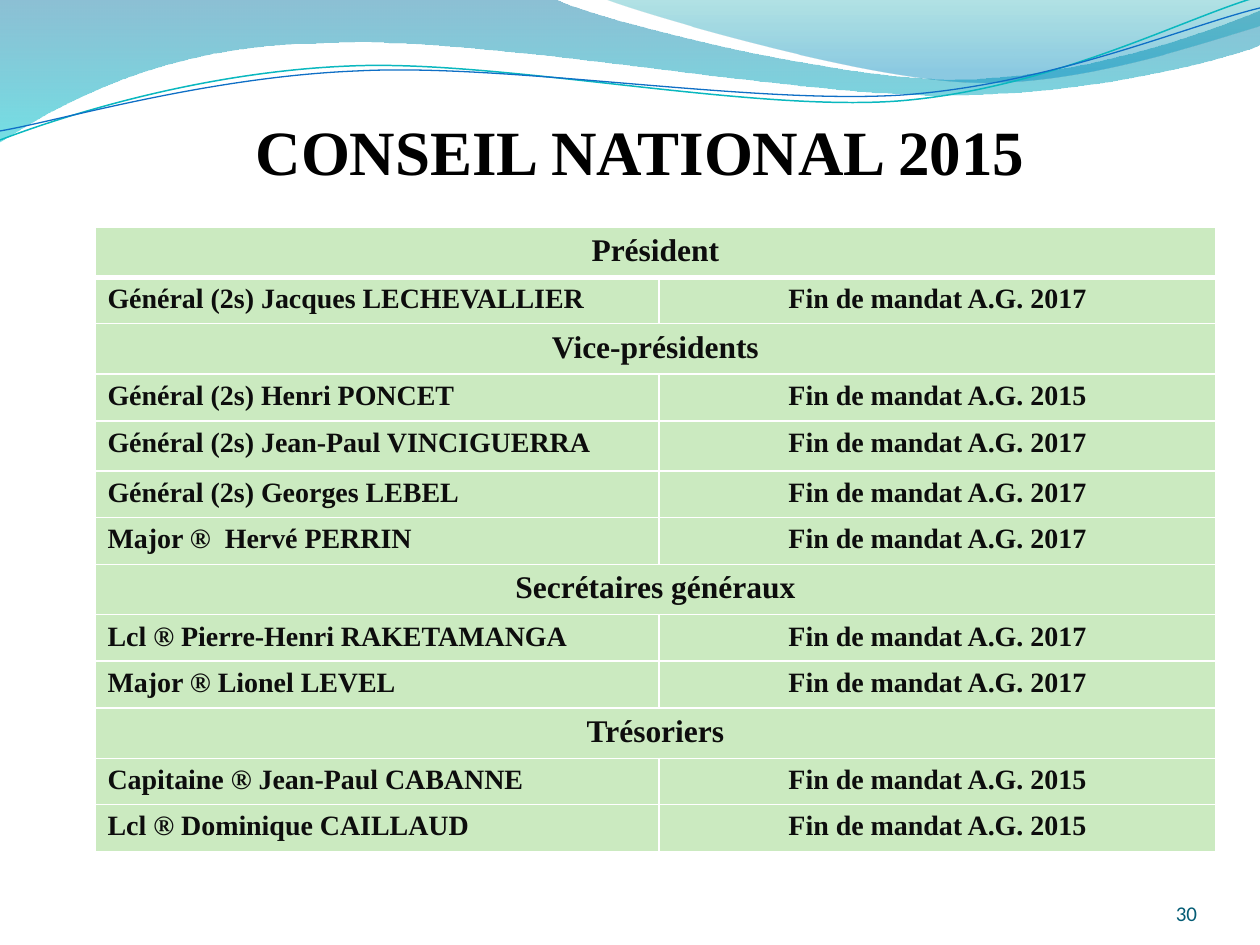
from itertools import chain
from lxml import etree
from pptx import Presentation
from pptx.dml.color import RGBColor
from pptx.enum.text import MSO_ANCHOR, MSO_AUTO_SIZE, PP_ALIGN
from pptx.oxml import parse_xml
from pptx.oxml.ns import nsdecls, qn
from pptx.util import Pt

W, H = 1260, 945
COLORS = {
    "blue_top": "0074A1", "cyan_bottom": "00C6CF",
    "teal_top": "00A1A9", "blue_bottom": "008BBF",
    "teal_line": "0AB8BF", "blue_line": "0F6FC6",
    "title": "000000", "page": "045C75",
    "cell": "CBEAC0", "cell_text": "0D0D0D", "border": "FFFFFF",
}
SERIF = "Times New Roman"

# Waves: a start point, then (x, y) for a line or three points for a curve
LEFT_WAVE = [
    (0, -1), (554, -1), (600, 21, 837, 79, 955, 79),
    (1074, 79, 1207, 33, 1260, 11), (1261, 45), (1239, 55, 1096, 96, 940, 95),
    (784, 95, 481, 35, 324, 43), (163, 44, 58, 105, -1, 142),
]
RIGHT_WAVE = [
    (604, -1), (641, 14, 859, 78, 969, 82),
    (1079, 87, 1211, 40, 1260, 26), (1260, 0),
]
TEAL_CURVE = [
    (0, 140), (60, 117, 199, 72, 349, 66),
    (498, 59, 747, 112, 898, 101), (1050, 89, 1182, 19, 1257, -3),
]
BLUE_CURVE = [
    (0, 131), (59, 121, 207, 77, 357, 71),
    (508, 63, 752, 105, 903, 95), (1053, 84, 1186, 26, 1260, 8),
]

# Council: heading, then (name, year the term ends)
COUNCIL = [
    ("Président", [("Général (2s) Jacques LECHEVALLIER", 2017)]),
    ("Vice-présidents", [
        ("Général (2s) Henri PONCET", 2015),
        ("Général (2s) Jean-Paul VINCIGUERRA", 2017),
        ("Général (2s) Georges LEBEL", 2017),
        ("Major ®  Hervé PERRIN", 2017),
    ]),
    ("Secrétaires généraux", [
        ("Lcl ® Pierre-Henri RAKETAMANGA", 2017),
        ("Major ® Lionel LEVEL", 2017),
    ]),
    ("Trésoriers", [
        ("Capitaine ® Jean-Paul CABANNE", 2015),
        ("Lcl ® Dominique CAILLAUD", 2015),
    ]),
]
COL_WIDTHS = [564, 557]
ROW_HEIGHTS = [50, 46, 50, 47, 50, 46, 47, 50, 46, 47, 50, 46, 47]


def px(n):
    return round(n * 914400 / 126)


def rgb(name):
    return RGBColor.from_string(COLORS[name])


def write(tf, text, size, font, color, bold=False, align=PP_ALIGN.LEFT):
    p = tf.paragraphs[0]
    p.alignment = align
    r = p.add_run()
    r.text = text
    for key, value in {"size": Pt(size), "name": font, "bold": bold}.items():
        setattr(r.font, key, value)
    r.font.color.rgb = rgb(color)


def add_text(s, box, text, frame, **fmt):
    tf = s.shapes.add_textbox(*map(px, box)).text_frame
    for key, value in frame.items():
        setattr(tf, key, value)
    write(tf, text, **fmt)


def add_curve(s, box, parts, close):
    x, y = box[:2]
    points = [(px(x + a), px(y + b)) for part in parts
              for a, b in zip(part[::2], part[1::2])]
    builder = s.shapes.build_freeform(*points[0], scale=1.0)
    builder.add_line_segments(points[1:], close=close)
    sp = builder.convert_to_shape()
    sp.shadow.inherit = False
    # Turn each run of three control points into one Bézier segment
    lines = list(sp._element.iter(qn("a:lnTo")))
    for part in parts[1:]:
        step = len(part) // 2
        group, lines = lines[:step], lines[step:]
        if step == 3:
            curve = etree.Element(qn("a:cubicBezTo"))
            group[0].addprevious(curve)
            for line in group:
                curve.append(line[0])
                line.getparent().remove(line)
    return sp


def add_waves(s, box):
    # Translucent bands: (position, colour, opacity in percent)
    for parts, stops in (
        (LEFT_WAVE, [(0, "blue_top", 45), (1, "cyan_bottom", 55)]),
        (RIGHT_WAVE, [(0, "teal_top", 30), (0.8, "blue_bottom", 45)]),
    ):
        sp = add_curve(s, box, parts, True)
        sp.line.fill.background()
        sp.fill.gradient()
        sp.fill.gradient_angle = 270
        for stop, (position, color, _) in zip(sp.fill.gradient_stops, stops):
            stop.position = position
            stop.color.rgb = rgb(color)
        clrs = sp._element.spPr.find(qn("a:gradFill")).iter(qn("a:srgbClr"))
        for clr, (_, _, alpha) in zip(clrs, stops):
            etree.SubElement(clr, qn("a:alpha")).set("val", str(alpha * 1000))
    # Thin lines
    for parts, color, width in ((TEAL_CURVE, "teal_line", 0.85),
                                (BLUE_CURVE, "blue_line", 0.75)):
        sp = add_curve(s, box, parts, False)
        sp.fill.background()
        sp.line.color.rgb = rgb(color)
        sp.line.width = Pt(width)


def set_borders(cell, widths):
    tcPr = cell._tc.get_or_add_tcPr()
    for i, (side, width) in enumerate(widths.items()):
        tcPr.insert(i, parse_xml(
            f'<a:ln{side} {nsdecls("a")} w="{Pt(width)}"><a:solidFill>'
            f'<a:srgbClr val="{COLORS["border"]}"/></a:solidFill></a:ln{side}>'))


def add_council(s, box):
    rows = list(chain.from_iterable(
        [(heading, None), *members] for heading, members in COUNCIL))
    table = s.shapes.add_table(len(rows), 2, *map(px, box)).table
    for col, width in zip(table.columns, COL_WIDTHS):
        col.width = px(width)
    for i, (label, year) in enumerate(rows):
        table.rows[i].height = px(ROW_HEIGHTS[i])
        left, right = table.cell(i, 0), table.cell(i, 1)
        for cell in (left, right):
            cell.fill.solid()
            cell.fill.fore_color.rgb = rgb("cell")
            set_borders(cell, {"L": 1, "R": 1, "T": 3 if i == 1 else 1,
                               "B": 3 if i == 0 else 1})
        fmt = {"font": SERIF, "color": "cell_text", "bold": True}
        if year is None:
            left.merge(right)
            write(left.text_frame, label, 18, align=PP_ALIGN.CENTER, **fmt)
        else:
            write(left.text_frame, label, 16, **fmt)
            write(right.text_frame, f"Fin de mandat A.G. {year}", 16,
                  align=PP_ALIGN.CENTER, **fmt)


def main():
    prs = Presentation()
    prs.slide_width, prs.slide_height = px(W), px(H)
    s = prs.slides.add_slide(prs.slide_layouts[6])
    add_waves(s, (0, 0, W, 142))
    # Title
    add_text(s, (233, 106, 814, 89), "CONSEIL NATIONAL 2015",
             {"word_wrap": True, "auto_size": MSO_AUTO_SIZE.SHAPE_TO_FIT_TEXT},
             size=36, font=SERIF, color="title", bold=True,
             align=PP_ALIGN.CENTER)
    # Page number
    margins = {f"margin_{side}": 0
               for side in ("left", "top", "right", "bottom")}
    add_text(s, (1092, 876, 105, 50), "30",
             {"word_wrap": True, "vertical_anchor": MSO_ANCHOR.BOTTOM,
              **margins},
             size=12, font="Calibri", color="page", align=PP_ALIGN.RIGHT)
    add_council(s, (95, 227, sum(COL_WIDTHS), sum(ROW_HEIGHTS)))
    prs.save("out.pptx")


if __name__ == "__main__":
    main()
